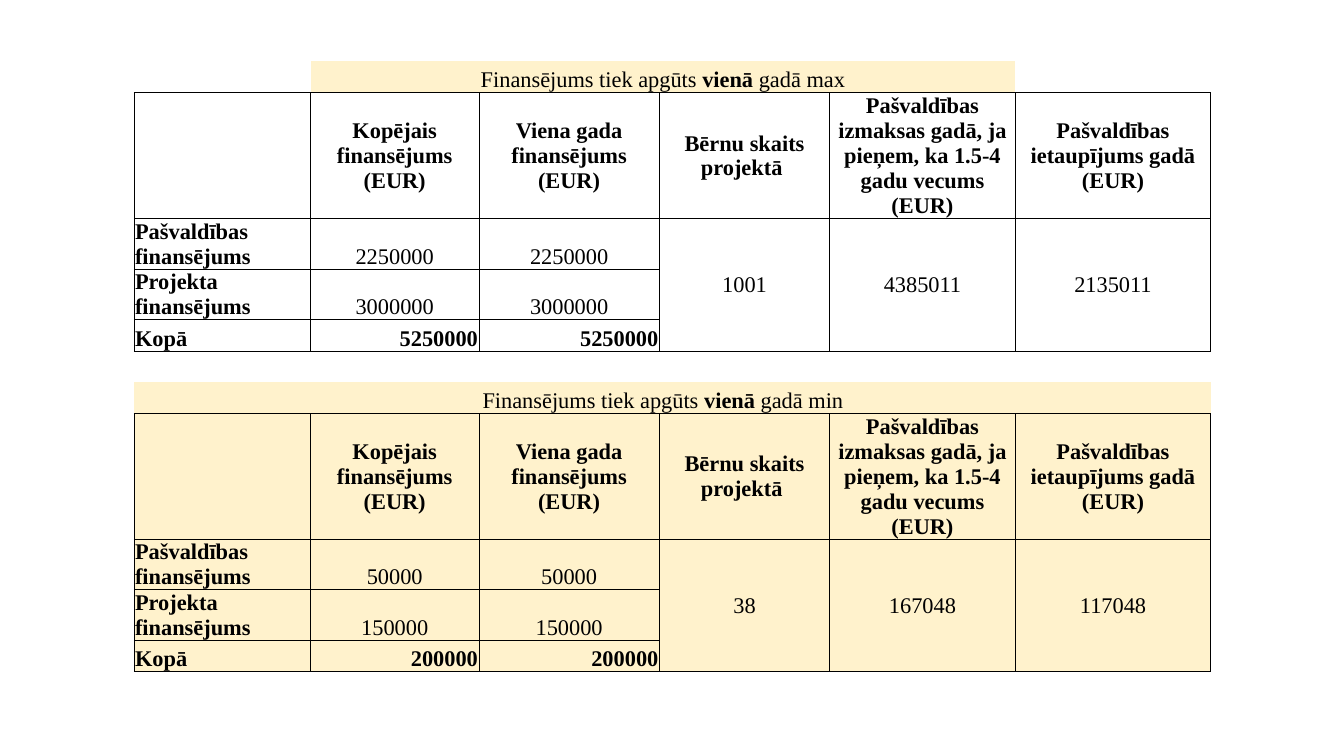
from pptx import Presentation
from pptx import util as u
from pptx.dml.color import RGBColor
from pptx.enum import text
from pptx.oxml import parse_xml
from pptx.oxml.ns import nsdecls, qn

LEFT, CENTER, RIGHT = text.PP_ALIGN.LEFT, text.PP_ALIGN.CENTER, text.PP_ALIGN.RIGHT
MIDDLE, BOTTOM = text.MSO_ANCHOR.MIDDLE, text.MSO_ANCHOR.BOTTOM
BLACK, CREAM = "000000", "FFF2CC"

COLS = [1.75, 1.67, 1.79, 1.69, 1.84, 1.94]
BLOCK_ROWS = [0.31, 1.24, 0.5, 0.5, 0.31]
GAP = 0.31
HEADERS = ["", "Kopējais finansējums (EUR)", "Viena gada finansējums (EUR)",
           "Bērnu skaits projektā ",
           "Pašvaldības izmaksas gadā, ja pieņem, ka 1.5-4 gadu vecums (EUR)",
           "Pašvaldības ietaupījums gadā (EUR)"]
LABELS = ["Pašvaldības finansējums", "Projekta finansējums", "Kopā"]


def rgb(value):
    return RGBColor.from_string(value)


class Deck:
    font, size, line = "Times New Roman", u.Pt(16), u.Pt(0.5)

    def __init__(self, prs):
        self.s = prs.slides.add_slide(prs.slide_layouts[6])

    def table(self, left, top, cols, rows):
        frame = self.s.shapes.add_table(
            len(rows), len(cols), u.Inches(left), u.Inches(top),
            u.Inches(sum(cols)), u.Inches(sum(rows)))
        tbl = frame.table
        tbl.first_row = tbl.horz_banding = False
        for col, width in zip(tbl.columns, cols):
            col.width = u.Inches(width)
        for row, height in zip(tbl.rows, rows):
            row.height = u.Inches(height)
        return tbl

    def cell(self, c, fill=None, sides="LRTB"):
        """Fill, margins and the border sides that are drawn."""
        c.margin_left = c.margin_right = c.margin_top = u.Inches(0.01)
        c.margin_bottom = 0
        if fill:
            c.fill.solid()
            c.fill.fore_color.rgb = rgb(fill)
        else:
            c.fill.background()
        pr = c._tc.get_or_add_tcPr()
        for i, side in enumerate("LRTB"):
            paint = "<a:noFill/>"
            if side in sides:
                paint = f'<a:solidFill><a:srgbClr val="{BLACK}"/></a:solidFill>'
            pr.insert(i, parse_xml(
                f'<a:ln{side} {nsdecls("a")} w="{self.line}">{paint}</a:ln{side}>'))
        # Keeps empty cells as low as the text rows
        p = c.text_frame.paragraphs[0]._p
        p.append(p.makeelement(qn("a:endParaRPr"),
                               {"sz": str(int(self.size.pt * 100))}))

    def label(self, c, runs, align=CENTER, anchor=MIDDLE):
        c.vertical_anchor = anchor
        p = c.text_frame.paragraphs[0]
        p.alignment = align
        for words, bold in runs:
            r = p.add_run()
            r.text = words
            r.font.name, r.font.size, r.font.bold = self.font, self.size, bold
            r.font.color.rgb = rgb(BLACK)

    def block(self, tbl, top, limit, amounts, results, fill, caption_ends):
        """Caption, header and three rows of one financing case."""
        for row in range(len(BLOCK_ROWS)):
            for col in range(len(COLS)):
                c = tbl.cell(top + row, col)
                if row == 0:
                    end = col in (0, len(COLS) - 1)
                    self.cell(c, caption_ends if end else CREAM, "B")
                else:
                    self.cell(c, fill)

        # Caption
        caption = tbl.cell(top, 1)
        caption.merge(tbl.cell(top, 4))
        self.label(caption, [("Finansējums tiek apgūts ", False), ("vienā ", True),
                             (f"gadā {limit}", False)], anchor=BOTTOM)

        # Header
        for col, words in enumerate(HEADERS):
            if words:
                self.label(tbl.cell(top + 1, col), [(words, True)])

        # Amounts, with the total last
        for row, (name, amount) in enumerate(zip(LABELS, amounts), top + 2):
            total = name == LABELS[-1]
            self.label(tbl.cell(row, 0), [(name, True)], LEFT, BOTTOM)
            for col in (1, 2):
                self.label(tbl.cell(row, col), [(str(amount), total)],
                           RIGHT if total else CENTER, BOTTOM)

        # Results over the three rows
        for col, value in enumerate(results, 3):
            c = tbl.cell(top + 2, col)
            c.merge(tbl.cell(top + 4, col))
            self.label(c, [(str(value), False)])


def main():
    prs = Presentation()
    prs.slide_width, prs.slide_height = u.Inches(13.33), u.Inches(7.5)
    deck = Deck(prs)
    tbl = deck.table(1.33, 0.61, COLS, BLOCK_ROWS + [GAP] + BLOCK_ROWS)

    # Largest case
    deck.block(tbl, 0, "max", [2250000, 3000000, 5250000],
               [1001, 4385011, 2135011], None, None)

    # Gap row
    for col in range(len(COLS)):
        deck.cell(tbl.cell(len(BLOCK_ROWS), col), sides="T")

    # Smallest case
    deck.block(tbl, len(BLOCK_ROWS) + 1, "min", [50000, 150000, 200000],
               [38, 167048, 117048], CREAM, CREAM)

    prs.save("out.pptx")


if __name__ == "__main__":
    main()
